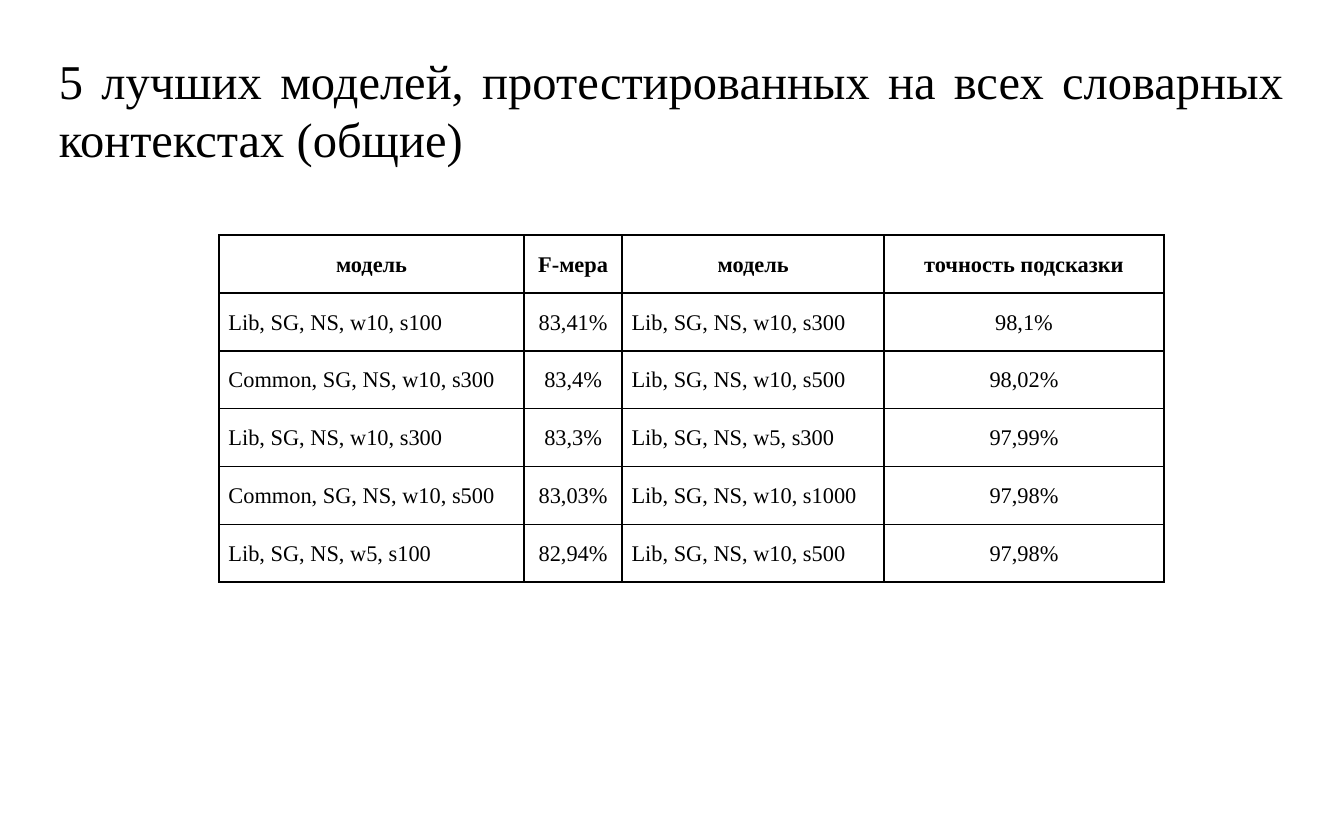
import pptx
import pptx.dml.color
import pptx.enum.text
import pptx.oxml
import pptx.oxml.ns
import pptx.util
from pptx.util import Inches

FONT = "Times New Roman"
BLACK = "000000"
ALIGN = pptx.enum.text.PP_ALIGN

COLUMN_WIDTHS = [2.27, 0.73, 1.95, 2.08]
COLUMN_ALIGNMENTS = [ALIGN.LEFT, ALIGN.CENTER, ALIGN.LEFT, ALIGN.CENTER]
ROW_HEIGHT = 0.41
ROWS = [
    ["модель", "F-мера", "модель", "точность подсказки"],
    ["Lib, SG, NS, w10, s100", "83,41%", "Lib, SG, NS, w10, s300", "98,1%"],
    ["Common, SG, NS, w10, s300", "83,4%", "Lib, SG, NS, w10, s500", "98,02%"],
    ["Lib, SG, NS, w10, s300", "83,3%", "Lib, SG, NS, w5, s300", "97,99%"],
    ["Common, SG, NS, w10, s500", "83,03%", "Lib, SG, NS, w10, s1000", "97,98%"],
    ["Lib, SG, NS, w5, s100", "82,94%", "Lib, SG, NS, w10, s500", "97,98%"],
]


def color(value):
    return pptx.dml.color.RGBColor.from_string(value)


def set_attributes(target, values):
    for name, value in values.items():
        setattr(target, name, value)


def write_text(text_frame, text, size, alignment, bold=False, line_spacing=1.0):
    paragraph = text_frame.paragraphs[0]
    set_attributes(paragraph, {"alignment": alignment, "line_spacing": line_spacing})
    run = paragraph.add_run()
    run.text = text
    set_attributes(run.font, {"name": FONT, "size": pptx.util.Pt(size), "bold": bold})
    run.font.color.rgb = color(BLACK)


def add_title(slide, text):
    shape = slide.shapes.add_textbox(Inches(0.34), Inches(0.28), Inches(9.32), Inches(0.7))
    margins = ["margin_left", "margin_top", "margin_right", "margin_bottom"]
    set_attributes(shape.text_frame, {"word_wrap": True, **dict.fromkeys(margins, Inches(0.1))})
    write_text(shape.text_frame, text, 26, ALIGN.JUSTIFY)


def add_borders(cell, line_color, width):
    properties = cell._tc.get_or_add_tcPr()
    for side in ("lnL", "lnR", "lnT", "lnB"):
        properties.append(pptx.oxml.parse_xml(
            f'<a:{side} {pptx.oxml.ns.nsdecls("a")} w="{pptx.util.Pt(width)}">'
            f'<a:solidFill><a:srgbClr val="{line_color}"/></a:solidFill></a:{side}>'))


def format_cell(cell, text, alignment, bold):
    set_attributes(cell, {
        "margin_left": Inches(0.07), "margin_right": Inches(0.07),
        "margin_top": Inches(0.1), "margin_bottom": Inches(0.1),
    })
    write_text(cell.text_frame, text, 12, alignment, bold, line_spacing=1.15)
    add_borders(cell, BLACK, 1)
    cell.fill.background()


def add_results_table(slide):
    table = slide.shapes.add_table(
        len(ROWS), len(COLUMN_WIDTHS), Inches(1.63), Inches(1.75),
        Inches(sum(COLUMN_WIDTHS)), Inches(ROW_HEIGHT * len(ROWS))).table
    set_attributes(table, {"first_row": False, "horz_banding": False})
    for column, width in zip(table.columns, COLUMN_WIDTHS):
        column.width = Inches(width)
    for row_index, (row, texts) in enumerate(zip(table.rows, ROWS)):
        row.height = Inches(ROW_HEIGHT)
        is_header = row_index == 0
        for cell, text, alignment in zip(row.cells, texts, COLUMN_ALIGNMENTS):
            format_cell(cell, text, ALIGN.CENTER if is_header else alignment, is_header)


def main():
    presentation = pptx.Presentation()
    set_attributes(presentation, {"slide_width": Inches(10), "slide_height": Inches(6.25)})
    slide = presentation.slides.add_slide(presentation.slide_layouts[6])

    # Heading
    add_title(slide, "5 лучших моделей, протестированных на всех словарных контекстах (общие)")

    # Model scores
    add_results_table(slide)

    presentation.save("out.pptx")


if __name__ == "__main__":
    main()
